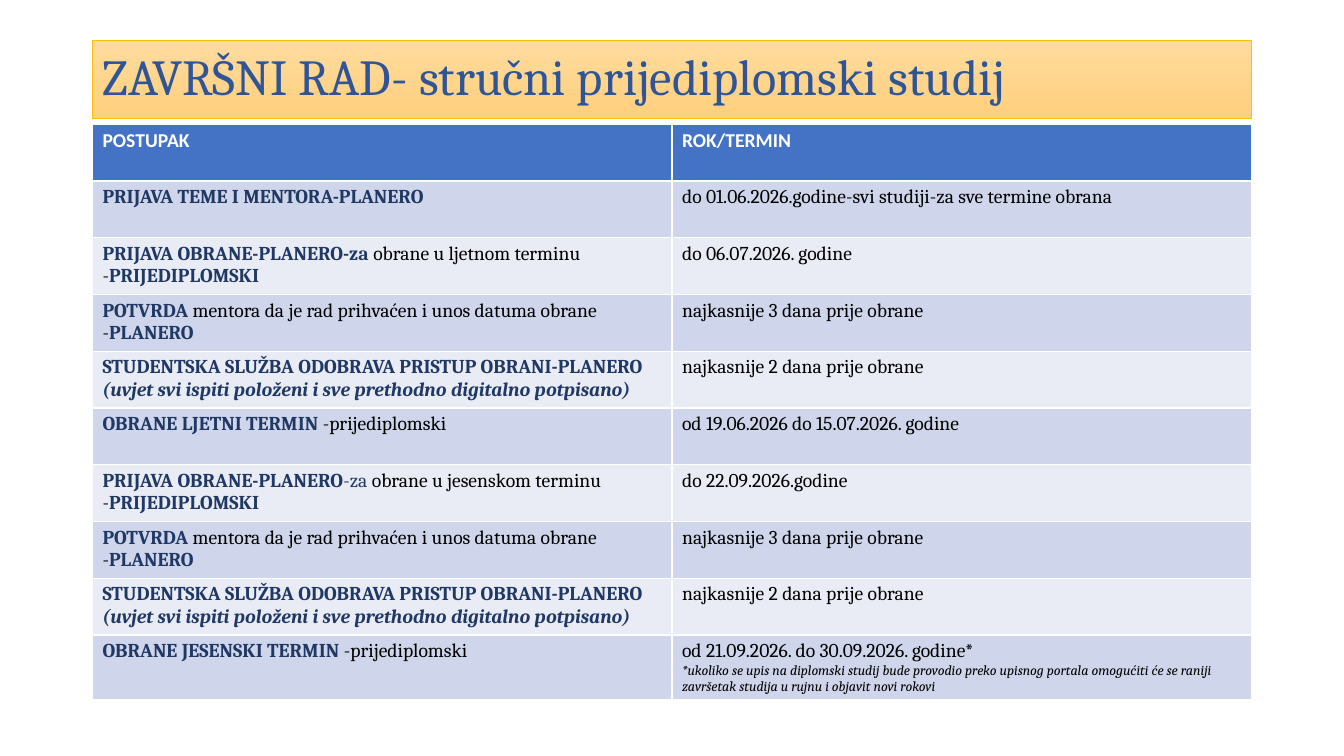
import dataclasses

import pptx
import pptx.dml.color
import pptx.enum.text
import pptx.util

Cm = pptx.util.Cm


def text_style(color, size=14, name="Cambria", bold=False, italic=False):
    font = {"name": name, "size": pptx.util.Pt(size), "bold": bold, "italic": italic}
    return font, color


@dataclasses.dataclass(frozen=True)
class Theme:
    title_fill = ("FFDB9E", "FFD07C")
    title_line = "FFC000"
    header_fill = "4472C4"
    band_fills = ("CFD5EA", "E9EBF5")
    styles = {
        "title": text_style("2F5597", size=36),
        "header": text_style("FFFFFF", name="Calibri", bold=True),
        "plain": text_style("000000"),
        "step": text_style("203864", bold=True),
        "step_light": text_style("203864"),
        "condition": text_style("203864", bold=True, italic=True),
        "footnote": text_style("000000", size=10, italic=True),
    }


def rgb(value):
    return pptx.dml.color.RGBColor.from_string(value)


def set_all(target, values):
    for key, value in values.items():
        setattr(target, key, value)


class SlideBuilder:
    def __init__(self, slide, theme):
        self.slide = slide
        self.theme = theme

    def fill_text(self, frame, paragraphs):
        """Fill a text frame from paragraphs, each a list of (style, text)."""
        for index, runs in enumerate(paragraphs):
            paragraph = frame.add_paragraph() if index else frame.paragraphs[0]
            for style, text in runs:
                run = paragraph.add_run()
                run.text = text
                font, color = self.theme.styles[style]
                set_all(run.font, font)
                run.font.color.rgb = rgb(color)

    def title(self, text, box):
        heading = self.slide.shapes.title
        set_all(heading, box)
        heading.fill.gradient()
        heading.fill.gradient_angle = 270
        for stop, color in zip(heading.fill.gradient_stops, self.theme.title_fill):
            stop.color.rgb = rgb(color)
        heading.line.color.rgb = rgb(self.theme.title_line)
        heading.line.width = pptx.util.Pt(0.5)
        set_all(heading.text_frame, {
            "word_wrap": True,
            "auto_size": pptx.enum.text.MSO_AUTO_SIZE.NONE,
            "vertical_anchor": pptx.enum.text.MSO_ANCHOR.MIDDLE,
        })
        self.fill_text(heading.text_frame, [[("title", text)]])
        set_all(heading.text_frame.paragraphs[0], {
            "alignment": pptx.enum.text.PP_ALIGN.LEFT,
            "line_spacing": 0.9,
        })

    def table(self, rows, box, heights):
        frame = self.slide.shapes.add_table(len(rows), len(rows[0]), **box)
        grid = frame.table
        for index, (row, height) in enumerate(zip(rows, heights)):
            grid.rows[index].height = height
            bands = self.theme.band_fills
            fill = bands[(index - 1) % len(bands)] if index else self.theme.header_fill
            for column, paragraphs in enumerate(row):
                cell = grid.cell(index, column)
                cell.fill.solid()
                cell.fill.fore_color.rgb = rgb(fill)
                self.fill_text(cell.text_frame, paragraphs)


def line(text, style="plain"):
    """A cell holding one paragraph in one style."""
    return [[(style, text)]]


def defence(term):
    return [[("step", f"OBRANE {term} TERMIN "), ("plain", "-prijediplomski")]]


CONDITION = ("condition", "(uvjet svi ispiti položeni i sve prethodno digitalno potpisano)")
APPROVAL = ("step", "STUDENTSKA SLUŽBA ODOBRAVA PRISTUP OBRANI-PLANERO ")
LEVEL = ("step", "PRIJEDIPLOMSKI")
CONFIRMATION = (
    [[("step", "POTVRDA "),
      ("plain", "mentora da je rad prihvaćen i unos datuma obrane -"),
      ("step", "PLANERO")]],
    line("najkasnije 3 dana prije obrane"),
)
APPROVAL_DUE = line("najkasnije 2 dana prije obrane")

SCHEDULE = [
    (line("POSTUPAK", "header"), line("ROK/TERMIN", "header")),
    (line("PRIJAVA TEME I MENTORA-PLANERO", "step"),
     line("do 01.06.2026.godine-svi studiji-za sve termine obrana")),
    ([[("step", "PRIJAVA OBRANE-PLANERO-za "),
       ("plain", "obrane u ljetnom terminu -"), LEVEL]],
     line("do 06.07.2026. godine")),
    CONFIRMATION,
    ([[APPROVAL], [CONDITION]], APPROVAL_DUE),
    (defence("LJETNI"), line("od 19.06.2026 do 15.07.2026. godine")),
    ([[("step", "PRIJAVA OBRANE-PLANERO"), ("step_light", "-za "),
       ("plain", "obrane u jesenskom terminu -"), LEVEL]],
     line("do 22.09.2026.godine")),
    CONFIRMATION,
    ([[APPROVAL, CONDITION]], APPROVAL_DUE),
    (defence("JESENSKI"),
     line("od 21.09.2026. do 30.09.2026. godine*")
     + line("*ukoliko se upis na diplomski studij bude provodio preko upisnog portala "
            "omogućiti će se raniji završetak studija u rujnu i objavit novi rokovi",
            "footnote")),
]


def main():
    deck = pptx.Presentation()
    deck.slide_width, deck.slide_height = Cm(33.87), Cm(19.05)
    slide = deck.slides.add_slide(deck.slide_layouts.get_by_name("Title Only"))
    builder = SlideBuilder(slide, Theme())

    column = {"left": Cm(2.33), "width": Cm(29.21)}
    builder.title("ZAVRŠNI RAD- stručni prijediplomski studij",
                  {**column, "top": Cm(1.02), "height": Cm(1.96)})
    heights = [Cm(1.43)] * (len(SCHEDULE) - 1) + [Cm(1.63)]
    builder.table(SCHEDULE, {**column, "top": Cm(3.13), "height": sum(heights)}, heights)
    deck.save("out.pptx")


if __name__ == "__main__":
    main()
